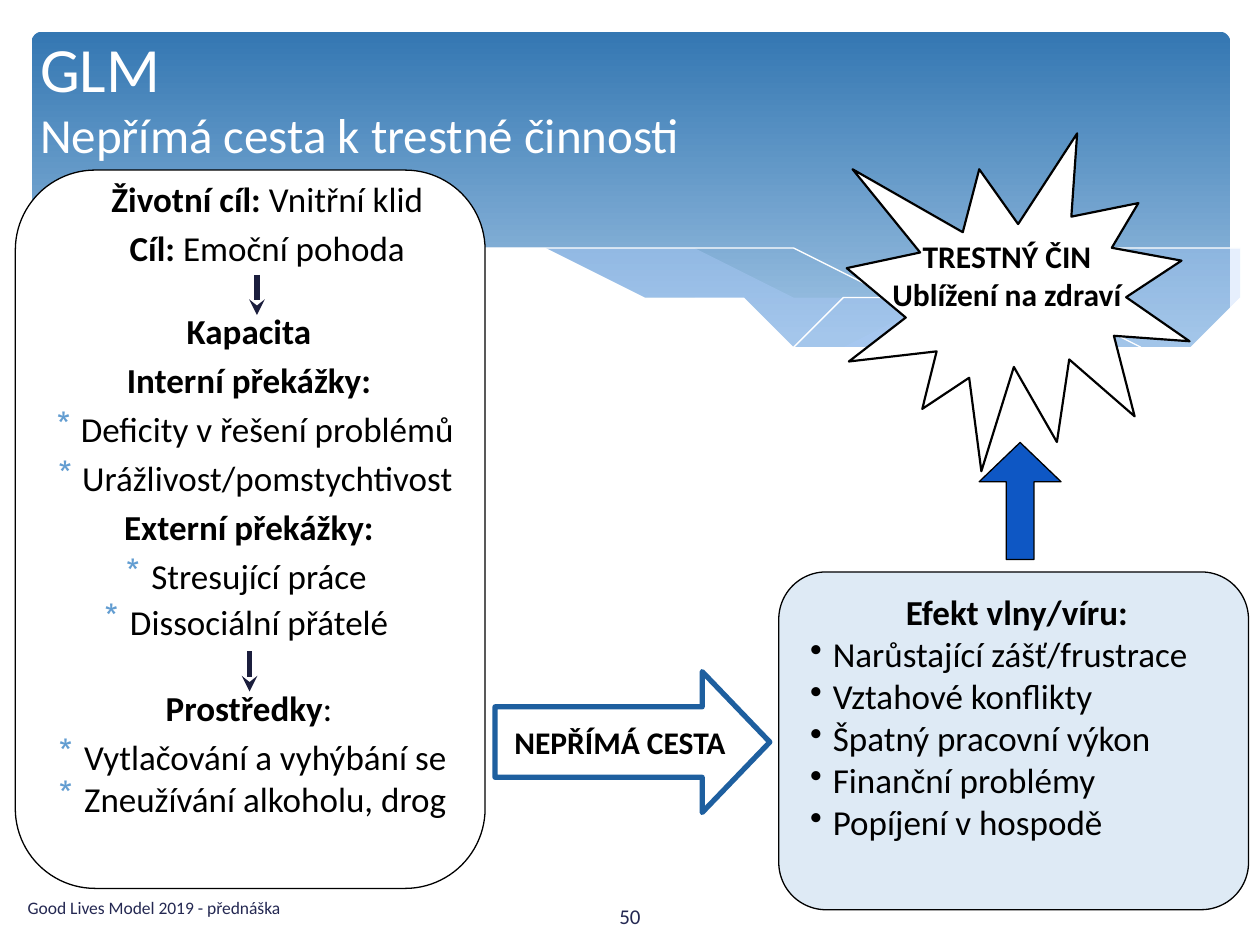
"""Build the Good Lives Model slide on the indirect route to offending."""
import dataclasses

import lxml.etree
import pptx
import pptx.dml.color
import pptx.enum.dml
import pptx.enum.shapes
import pptx.enum.text
import pptx.oxml.ns
import pptx.util

Cm = pptx.util.Cm
Pt = pptx.util.Pt
RGB = pptx.dml.color.RGBColor.from_string
SHAPE = pptx.enum.shapes.MSO_SHAPE
ANCHOR = pptx.enum.text.MSO_ANCHOR
ALIGN = pptx.enum.text.PP_ALIGN
qn = pptx.oxml.ns.qn


@dataclasses.dataclass(frozen=True)
class Theme:
    font: str = "Calibri"
    white: str = "FFFFFF"
    black: str = "000000"
    navy: str = "242852"
    header_top: str = "3477B2"
    header_bottom: str = "9FC3E3"
    wave: str = "ACCBF9"
    star_bullet: str = "629DD1"
    route_line: str = "1E5F9F"
    effect_fill: str = "DEEAF5"
    up_arrow: str = "0E57C4"
    small_arrow: str = "1B1E3D"
    title: int = 36
    subtitle: int = 28
    body: int = 20
    label: int = 18
    number: int = 12
    footer: int = 10


theme = Theme()


def paint(shape, fill=None, line=None, width=0.75):
    shape.shadow.inherit = False
    if fill:
        shape.fill.solid()
        shape.fill.fore_color.rgb = RGB(fill)
    else:
        shape.fill.background()
    if line:
        shape.line.color.rgb = RGB(line)
        shape.line.width = Pt(width)
    else:
        shape.line.fill.background()


def write(frame, entries, color, align=ALIGN.CENTER, anchor=ANCHOR.TOP, inset=(0, 0)):
    frame.word_wrap = True
    frame.auto_size = pptx.enum.text.MSO_AUTO_SIZE.NONE
    frame.vertical_anchor = anchor
    frame.margin_left = frame.margin_right = Cm(inset[0])
    frame.margin_top = frame.margin_bottom = Cm(inset[1])
    for index, (runs, size, before, margin, hanging, bullet) in enumerate(entries):
        paragraph = frame.add_paragraph() if index else frame.paragraphs[0]
        paragraph.alignment = ALIGN.LEFT if bullet == "•" else align
        paragraph.space_before = Pt(before)
        properties = paragraph._p.get_or_add_pPr()
        properties.set("marL", str(Cm(margin)))
        properties.set("indent", str(-Cm(hanging)))
        if bullet:
            tint = lxml.etree.SubElement(properties, qn("a:buClr"))
            tint_value = theme.star_bullet if bullet == "*" else theme.black
            lxml.etree.SubElement(tint, qn("a:srgbClr"), val=tint_value)
            lxml.etree.SubElement(properties, qn("a:buChar"), char=bullet)
        for text, bold in runs:
            run = paragraph.add_run()
            run.text = text
            run.font.name = theme.font
            run.font.size = Pt(size)
            run.font.bold = bold
            run.font.color.rgb = RGB(color)


deck = pptx.Presentation()
deck.slide_width, deck.slide_height = Cm(25.4), Cm(19.05)
slide = deck.slides.add_slide(deck.slide_layouts[5])
shapes = slide.shapes

header = shapes.add_shape(SHAPE.ROUNDED_RECTANGLE, Cm(0.64), Cm(0.64), Cm(24.16), Cm(6.86))
header.adjustments[0] = 0.03
paint(header)
header.fill.gradient()
header.fill.gradient_angle = 270
for stop, color, position in zip(
        header.fill.gradient_stops, (theme.header_top, theme.header_bottom), (0, 0.9)):
    stop.color.rgb = RGB(color)
    stop.position = position

right_wave = [(24.79, 5.08), (23.75, 5.26), (22.63, 5.49), (21.13, 5.84), (19.13, 6.3),
              (16.79, 6.73), (17.91, 6.88), (19.23, 7.01), (20.4, 7.06), (21.69, 7.01),
              (22.78, 6.86), (23.75, 6.65), (24.79, 6.27)]
middle_wave = [(22.68, 6.93), (21.26, 6.73), (19.69, 6.45), (17.93, 6.1), (15.98, 5.64),
               (14.45, 5.28), (13.06, 5.03), (11.81, 4.85), (10.67, 4.75), (9.65, 4.7),
               (8.74, 4.72), (7.26, 4.85), (8.69, 5.05), (10.26, 5.36), (12.47, 5.89),
               (14.38, 6.3), (16.1, 6.63), (17.65, 6.86), (19, 7.01), (20.22, 7.06),
               (21.54, 7.04)]
falling_line = [(7.85, 4.95), (8.74, 4.83), (9.83, 4.75), (11, 4.75), (12.42, 4.83),
                (14.12, 5), (16.15, 5.28), (18.47, 5.74), (21.11, 6.38), (23.04, 6.91)]
rising_line = [(15.57, 6.53), (17.07, 6.12), (19, 5.66), (21.23, 5.18), (22.73, 4.93),
               (23.83, 4.78), (24.77, 4.7)]
white_edge = [(24.82, 6.25), (23.88, 6.58), (22.83, 6.83), (21.59, 6.99), (20.55, 7.04),
              (19.33, 6.99), (17.98, 6.86), (16.46, 6.65), (14.71, 6.35), (12.78, 5.92),
              (10.62, 5.41), (8.64, 5), (6.88, 4.78), (5.36, 4.67), (4.09, 4.67),
              (2.69, 4.8), (1.7, 5), (0.58, 5.41), (0.58, 8.36), (24.82, 8.36)]
for points, fill, line, opacity in (
        (right_wave, theme.wave, None, 29), (middle_wave, theme.wave, None, 40),
        (falling_line, None, theme.white, 100), (rising_line, None, theme.white, 100),
        (white_edge, theme.white, None, 100)):
    builder = shapes.build_freeform(*points[0], scale=Cm(1))
    builder.add_line_segments(points[1:], close=fill is not None)
    curve = builder.convert_to_shape()
    paint(curve, fill, line)
    if opacity < 100:
        shade = curve._element.spPr.find(qn("a:solidFill"))[0]
        lxml.etree.SubElement(shade, qn("a:alpha"), val=str(opacity * 1000))

for preset, box, adjustments, fill, line, width in (
        (SHAPE.ROUNDED_RECTANGLE, (0.31, 3.43, 9.47, 14.48), [0.17], theme.white, theme.black, 0.75),
        (SHAPE.RIGHT_ARROW, (9.98, 13.54, 5.54, 2.84), [0.5, 0.48], None, theme.route_line, 3),
        (SHAPE.ROUNDED_RECTANGLE, (15.7, 11.53, 9.47, 6.81), [0.14], theme.effect_fill, theme.black, 0.75),
        (SHAPE.UP_ARROW, (19.74, 8.92, 1.65, 2.36), [0.34, 0.48], theme.up_arrow, theme.black, 0.75),
        (SHAPE.EXPLOSION1, (17.07, 2.69, 6.91, 6.81), [], theme.white, theme.black, 1.25)):
    figure = shapes.add_shape(preset, *map(Cm, box))
    for index, value in enumerate(adjustments):
        figure.adjustments[index] = value
    paint(figure, fill, line, width)

title = shapes.title
title.left, title.top, title.width, title.height = Cm(0.56), Cm(0.46), Cm(18.42), Cm(3)
title._element.getparent().append(title._element)
write(title.text_frame, [
    ([("GLM", False)], theme.title, 0, 0, 0, None),
    ([("Nepřímá cesta k trestné činnosti", False)], theme.subtitle, 0, 0, 0, None),
], theme.white, ALIGN.LEFT, inset=(0.25, 0.13))

route = [
    ([("Životní cíl: ", True), ("Vnitřní klid", False)], 0, 0.74, 0, None),
    ([("Cíl: ", True), ("Emoční pohoda", False)], 4, 0.74, 0, None),
    ([("Kapacita", True)], 23.5, 0, 0, None),
    ([("Interní překážky:", True)], 4, 0, 0, None),
    ([("Deficity v řešení problémů", False)], 4, 0.74, 0.48, "*"),
    ([("Urážlivost/pomstychtivost", False)], 4, 0.74, 0.48, "*"),
    ([("Externí překážky:", True)], 4, 0, 0, None),
    ([("Stresující práce", False)], 4, 0.41, 0.51, "*"),
    ([("Dissociální přátelé", False)], 2, 0.41, 0.51, "*"),
    ([("Prostředky", True), (":", False)], 25, 0, 0, None),
    ([("Vytlačování a vyhýbání se", False)], 4, 0.66, 0.51, "*"),
    ([("Zneužívání alkoholu, drog", False)], 0, 0.66, 0.51, "*"),
]
effects = ["Narůstající zášť/frustrace", "Vztahové konflikty", "Špatný pracovní výkon",
           "Finanční problémy", "Popíjení v hospodě"]
for box, entries, color, align, anchor in (
        ((-0.15, 3.58, 10.34, 13.16), [(runs, theme.body, *rest) for runs, *rest in route],
         theme.black, ALIGN.CENTER, ANCHOR.TOP),
        ((0.56, 17.78, 10.52, 1.02),
         [([("Good Lives Model 2019 - přednáška", False)], theme.footer, 0, 0, 0, None)],
         theme.navy, ALIGN.LEFT, ANCHOR.MIDDLE),
        ((9.7, 18.21, 5.92, 0.51), [([("50", False)], theme.number, 0, 0.08, 0, None)],
         theme.navy, ALIGN.CENTER, ANCHOR.MIDDLE),
        ((10.34, 14.58, 4.72, 0.76),
         [([("NEPŘÍMÁ CESTA", True)], theme.label, 0, 0.03, 0, None)],
         theme.black, ALIGN.LEFT, ANCHOR.TOP),
        ((16.31, 11.91, 8.38, 5.13),
         [([("Efekt vlny/víru:", True)], theme.body, 0, 0, 0, None)]
         + [([(effect, False)], theme.body, 0, 0.48, 0.46, "•") for effect in effects],
         theme.black, ALIGN.CENTER, ANCHOR.TOP),
        ((17.86, 4.78, 4.88, 1.55),
         [([(text, True)], theme.label, 0, 0, 0, None)
          for text in ("TRESTNÝ ČIN", "Ublížení na zdraví")],
         theme.black, ALIGN.CENTER, ANCHOR.TOP)):
    write(shapes.add_textbox(*map(Cm, box)).text_frame, entries, color, align, anchor)

for x, top in ((5.18, 5.54), (5.03, 13.13)):
    step = shapes.add_connector(
        pptx.enum.shapes.MSO_CONNECTOR.STRAIGHT, Cm(x), Cm(top), Cm(x), Cm(top + 0.81))
    step.line.color.rgb = RGB(theme.small_arrow)
    step.line.width = Pt(3)
    lxml.etree.SubElement(step.line._get_or_add_ln(), qn("a:tailEnd"), type="stealth")
    lxml.etree.SubElement(step._element.spPr, qn("a:effectLst"))

deck.save("out.pptx")
